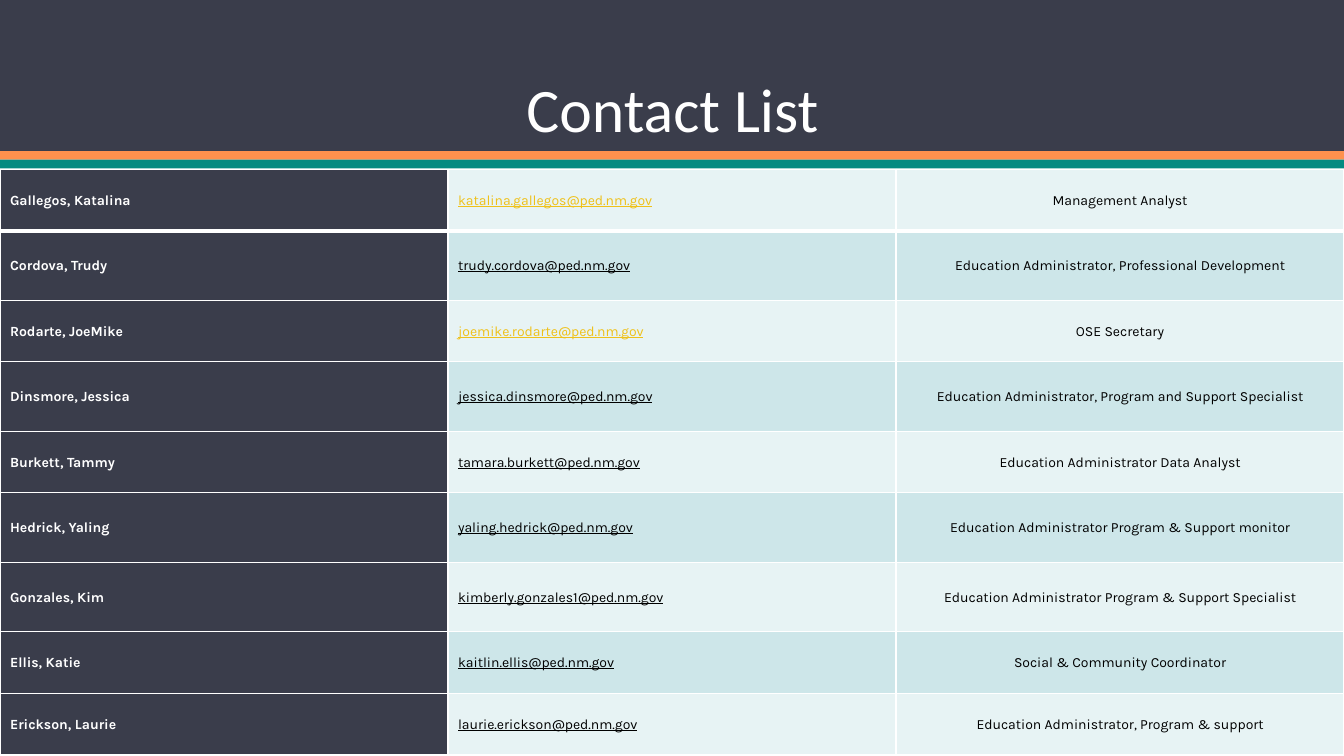
from dataclasses import dataclass

from lxml.etree import SubElement
from pptx import Presentation
from pptx.dml.color import RGBColor
from pptx.enum.shapes import MSO_SHAPE
from pptx.enum.text import MSO_ANCHOR, PP_ALIGN
from pptx.oxml.ns import qn
from pptx.util import Inches, Pt

TITLE = "Contact List"
# name, e-mail, role, e-mail highlighted, tall row
CONTACTS = [
    ("Gallegos, Katalina", "katalina.gallegos@ped.nm.gov", "Management Analyst", True, False),
    ("Cordova, Trudy", "trudy.cordova@ped.nm.gov",
     "Education Administrator, Professional Development", False, True),
    ("Rodarte, JoeMike", "joemike.rodarte@ped.nm.gov", "OSE Secretary", True, False),
    ("Dinsmore, Jessica", "jessica.dinsmore@ped.nm.gov",
     "Education Administrator, Program and Support Specialist", False, True),
    ("Burkett, Tammy", "tamara.burkett@ped.nm.gov",
     "Education Administrator Data Analyst", False, False),
    ("Hedrick, Yaling", "yaling.hedrick@ped.nm.gov",
     "Education Administrator Program & Support monitor", False, True),
    ("Gonzales, Kim", "kimberly.gonzales1@ped.nm.gov",
     "Education Administrator Program & Support Specialist", False, True),
    ("Ellis, Katie", "kaitlin.ellis@ped.nm.gov", "Social & Community Coordinator", False, False),
    ("Erickson, Laurie", "laurie.erickson@ped.nm.gov",
     "Education Administrator, Program & support", False, False),
]


@dataclass(frozen=True)
class Theme:
    dark: str = "3A3D4B"
    orange: str = "FF914D"
    teal: str = "048A81"
    pale: str = "E7F3F4"
    tint: str = "CDE6E9"
    link: str = "EFC119"
    white: str = "FFFFFF"
    black: str = "000000"
    title_font: str = "Calibri"
    table_font: str = "Karla"
    title_size: float = 44.1
    table_size: float = 10


THEME = Theme()
WIDTH, HEIGHT = Inches(13.33), Inches(7.5)
BANNER = Inches(1.5)
STRIPE = Inches(0.085)
TABLE_TOP = Inches(1.68)
SHORT_ROW, TALL_ROW = Inches(0.61), Inches(0.69)


def add_band(slide, top, height, color):
    band = slide.shapes.add_shape(MSO_SHAPE.RECTANGLE, 0, top, WIDTH, height)
    band.shadow.inherit = False
    band.fill.solid()
    band.fill.fore_color.rgb = RGBColor.from_string(color)
    band.line.fill.background()


def add_text(paragraph, text, font, size, color, bold=False, underline=False):
    run = paragraph.add_run()
    run.text = text
    run.font.name = font
    run.font.size = Pt(size)
    run.font.bold = bold
    run.font.underline = underline
    run.font.color.rgb = RGBColor.from_string(color)


def set_borders(cell, top, bottom):
    """Draw white cell borders; top and bottom are widths in points."""
    properties = cell._tc.get_or_add_tcPr()
    for side, width in (("L", 1), ("R", 1), ("T", top), ("B", bottom)):
        border = SubElement(properties, qn(f"a:ln{side}"), w=str(Pt(width)))
        fill = SubElement(border, qn("a:solidFill"))
        SubElement(fill, qn("a:srgbClr"), val=THEME.white)


def add_title(slide):
    title = slide.shapes.title
    title.width, title.height = Inches(10.5), Inches(1.13)
    title.left, title.top = Inches(1.42), BANNER - title.height
    frame = title.text_frame
    frame.word_wrap = True
    frame.vertical_anchor = MSO_ANCHOR.BOTTOM
    paragraph = frame.paragraphs[0]
    paragraph.alignment = PP_ALIGN.CENTER
    paragraph.line_spacing = 0.9
    add_text(paragraph, TITLE, THEME.title_font, THEME.title_size, THEME.white)
    # Bring the title in front of the bands
    slide.shapes._spTree.append(title._element)


def add_contacts(slide):
    table = slide.shapes.add_table(
        len(CONTACTS), 3, 0, TABLE_TOP, WIDTH, HEIGHT - TABLE_TOP).table
    table.first_row = table.horz_banding = False
    for column in table.columns:
        column.width = WIDTH // 3
    for index, (name, email, role, highlighted, tall) in enumerate(CONTACTS):
        table.rows[index].height = TALL_ROW if tall else SHORT_ROW
        stripe = THEME.tint if index % 2 else THEME.pale
        columns = [
            (name, THEME.white, THEME.dark, PP_ALIGN.LEFT, True, False),
            (email, THEME.link if highlighted else THEME.black, stripe,
             PP_ALIGN.LEFT, False, True),
            (role, THEME.black, stripe, PP_ALIGN.CENTER, False, False),
        ]
        for column, (text, color, fill, align, bold, underline) in enumerate(columns):
            cell = table.cell(index, column)
            set_borders(cell, top=3 if index == 1 else 1, bottom=3 if index == 0 else 1)
            cell.fill.solid()
            cell.fill.fore_color.rgb = RGBColor.from_string(fill)
            cell.vertical_anchor = MSO_ANCHOR.MIDDLE
            paragraph = cell.text_frame.paragraphs[0]
            paragraph.alignment = align
            paragraph.line_spacing = 1.07
            add_text(paragraph, text, THEME.table_font, THEME.table_size, color, bold, underline)


def main():
    presentation = Presentation()
    presentation.slide_width, presentation.slide_height = WIDTH, HEIGHT
    slide = presentation.slides.add_slide(presentation.slide_layouts[5])
    add_band(slide, 0, BANNER, THEME.dark)
    add_band(slide, BANNER, STRIPE, THEME.orange)
    add_band(slide, BANNER + STRIPE, STRIPE, THEME.teal)
    add_title(slide)
    add_contacts(slide)
    presentation.save("out.pptx")


if __name__ == "__main__":
    main()
